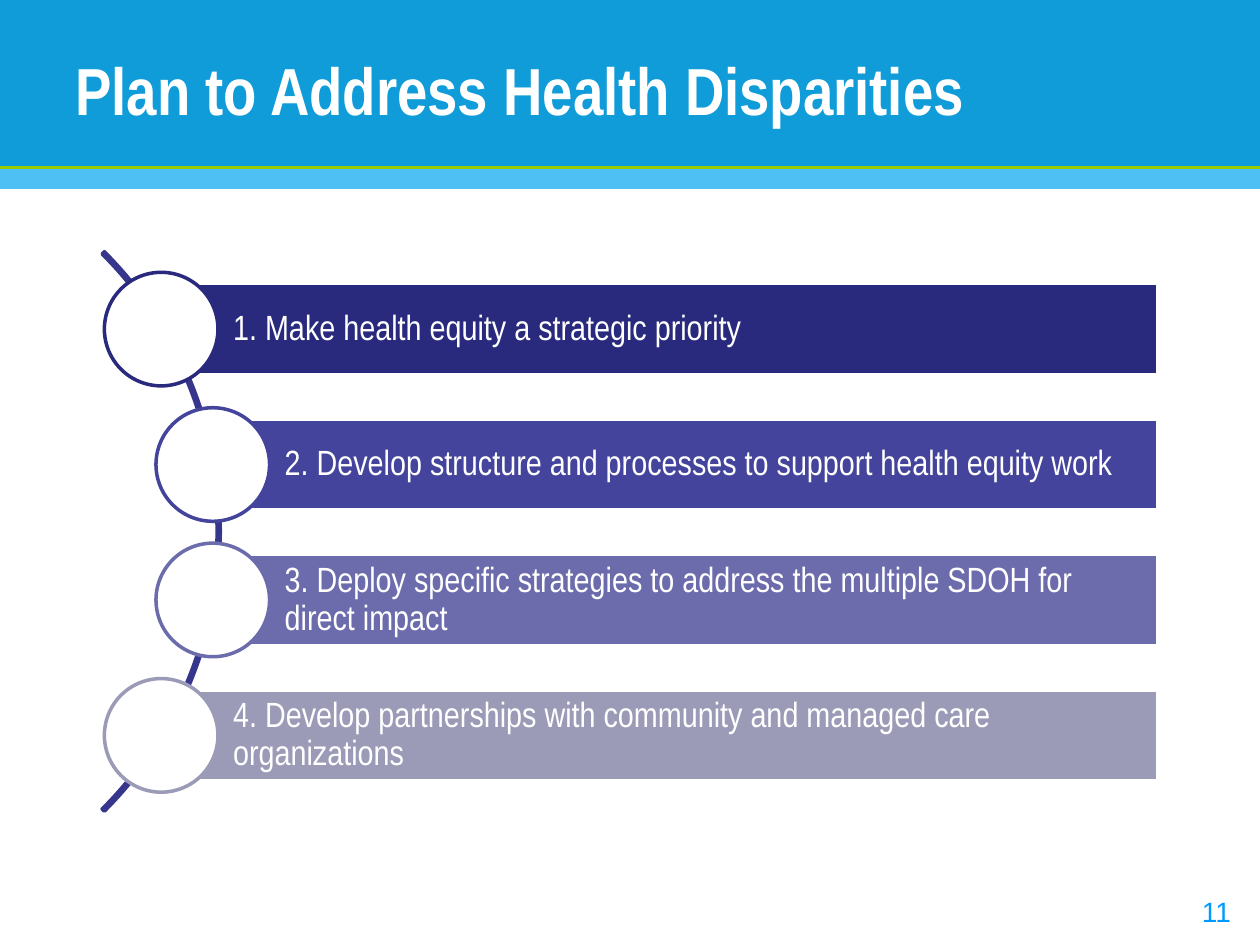
from dataclasses import dataclass

from lxml.etree import SubElement
from pptx import Presentation
from pptx.dml.color import RGBColor
from pptx.enum.shapes import MSO_CONNECTOR as Connector, MSO_SHAPE as Shape
from pptx.enum.text import MSO_ANCHOR as Anchor, MSO_AUTO_SIZE as AutoSize
from pptx.oxml.ns import qn
from pptx.util import Cm, Pt


@dataclass(frozen=True)
class Theme:
    """Colours, fonts and type sizes of the slide."""
    header: str = "0F9CD8"
    strip: str = "4FC0F3"
    rule: str = "99CC00"
    white: str = "FFFFFF"
    arc: str = "36368C"
    number: str = "0099FF"
    steps: tuple = ("29297D", "44449C", "6C6CAD", "9B9BB8")
    narrow: str = "Arial Narrow"
    regular: str = "Arial"
    title_size: int = 38
    step_size: int = 20
    number_size: int = 16


THEME = Theme()
SLIDE_WIDTH, SLIDE_HEIGHT = 25.4, 19.05
HEADER_HEIGHT, STRIP_HEIGHT = 3.38, 0.43
BAR_TOP, BAR_PITCH, BAR_HEIGHT, BAR_RIGHT = 5.72, 2.73, 1.83, 23.34
CIRCLE = 2.29
STEPS = (
    (3.25, "1. Make health equity a strategic priority"),
    (4.29, "2. Develop structure and processes to support health equity work"),
    (4.29, "3. Deploy specific strategies to address the multiple SDOH for direct impact"),
    (3.25, "4. Develop partnerships with community and managed care organizations"),
)


def add_figure(slide, kind, left, top, width, height, fill=None, line=None):
    """Add a preset shape with an optional fill and outline."""
    figure = slide.shapes.add_shape(kind, Cm(left), Cm(top), Cm(width), Cm(height))
    figure.shadow.inherit = False
    if fill:
        figure.fill.solid()
        figure.fill.fore_color.rgb = RGBColor.from_string(fill)
    else:
        figure.fill.background()
    if line:
        figure.line.color.rgb = RGBColor.from_string(line)
        figure.line.width = Pt(2)
    else:
        figure.line.fill.background()
    return figure


def write_text(holder, text, *, size, color, font=THEME.narrow, bold=False,
               anchor=Anchor.MIDDLE, wrap=True, spacing=1.0,
               insets=(0.25, 0.13, 0.25, 0.13)):
    """Write left-aligned text into a shape or text box."""
    frame = holder.text_frame
    frame.word_wrap = wrap
    frame.auto_size = AutoSize.NONE if wrap else AutoSize.SHAPE_TO_FIT_TEXT
    frame.vertical_anchor = anchor
    (frame.margin_left, frame.margin_top,
     frame.margin_right, frame.margin_bottom) = map(Cm, insets)
    paragraph = frame.paragraphs[0]
    paragraph.line_spacing = spacing
    paragraph.alignment = 1
    run = paragraph.add_run()
    run.text = text
    run.font.name = font
    run.font.size = Pt(size)
    run.font.bold = bold
    run.font.color.rgb = RGBColor.from_string(color)


def add_header(slide):
    """Add the header bands, the green rule and the title."""
    add_figure(slide, Shape.RECTANGLE, 0, 0, SLIDE_WIDTH, HEADER_HEIGHT, THEME.header)
    add_figure(slide, Shape.RECTANGLE, 0, HEADER_HEIGHT, SLIDE_WIDTH, STRIP_HEIGHT, THEME.strip)
    rule = slide.shapes.add_connector(
        Connector.STRAIGHT, 0, Cm(HEADER_HEIGHT), Cm(SLIDE_WIDTH), Cm(HEADER_HEIGHT))
    rule.line.color.rgb = RGBColor.from_string(THEME.rule)
    rule.line.width = Pt(1.5)
    SubElement(rule.element.spPr, qn("a:effectLst"))
    title = slide.shapes.add_textbox(Cm(1.27), Cm(0.43), Cm(23.93), Cm(2.74))
    write_text(title, "Plan to Address Health Disparities",
               size=THEME.title_size, color=THEME.white, bold=True)


def add_arc(slide):
    """Add the thin arc that links the steps."""
    arc = add_figure(slide, Shape.BLOCK_ARC, -11.51, 2.74, 15.95, 15.95, line=THEME.arc)
    for index, value in enumerate((189, 27, 0.004)):
        arc.adjustments[index] = value


def add_step(slide, left, top, text, color):
    """Add one step: its bar with text and the circle centred on the bar's left end."""
    bar = add_figure(slide, Shape.RECTANGLE, left, top, BAR_RIGHT - left, BAR_HEIGHT,
                     color, THEME.white)
    write_text(bar, text, size=THEME.step_size, color=THEME.white, spacing=0.9,
               insets=(1.45, 0.15, 0.15, 0.15))
    add_figure(slide, Shape.OVAL, left - CIRCLE / 2, top + (BAR_HEIGHT - CIRCLE) / 2,
               CIRCLE, CIRCLE, THEME.white, color)


def add_page_number(slide):
    """Add the page number at the lower right."""
    number = slide.shapes.add_textbox(Cm(23.98), Cm(17.91), Cm(1.19), Cm(0.94))
    write_text(number, "11", size=THEME.number_size, color=THEME.number,
               font=THEME.regular, anchor=Anchor.TOP, wrap=False)


def main():
    """Build and save the slide."""
    deck = Presentation()
    deck.slide_width, deck.slide_height = Cm(SLIDE_WIDTH), Cm(SLIDE_HEIGHT)
    slide = deck.slides.add_slide(deck.slide_layouts[6])
    add_header(slide)
    add_page_number(slide)
    add_arc(slide)
    for row, ((left, text), color) in enumerate(zip(STEPS, THEME.steps)):
        add_step(slide, left, BAR_TOP + row * BAR_PITCH, text, color)
    deck.save("out.pptx")


if __name__ == "__main__":
    main()
